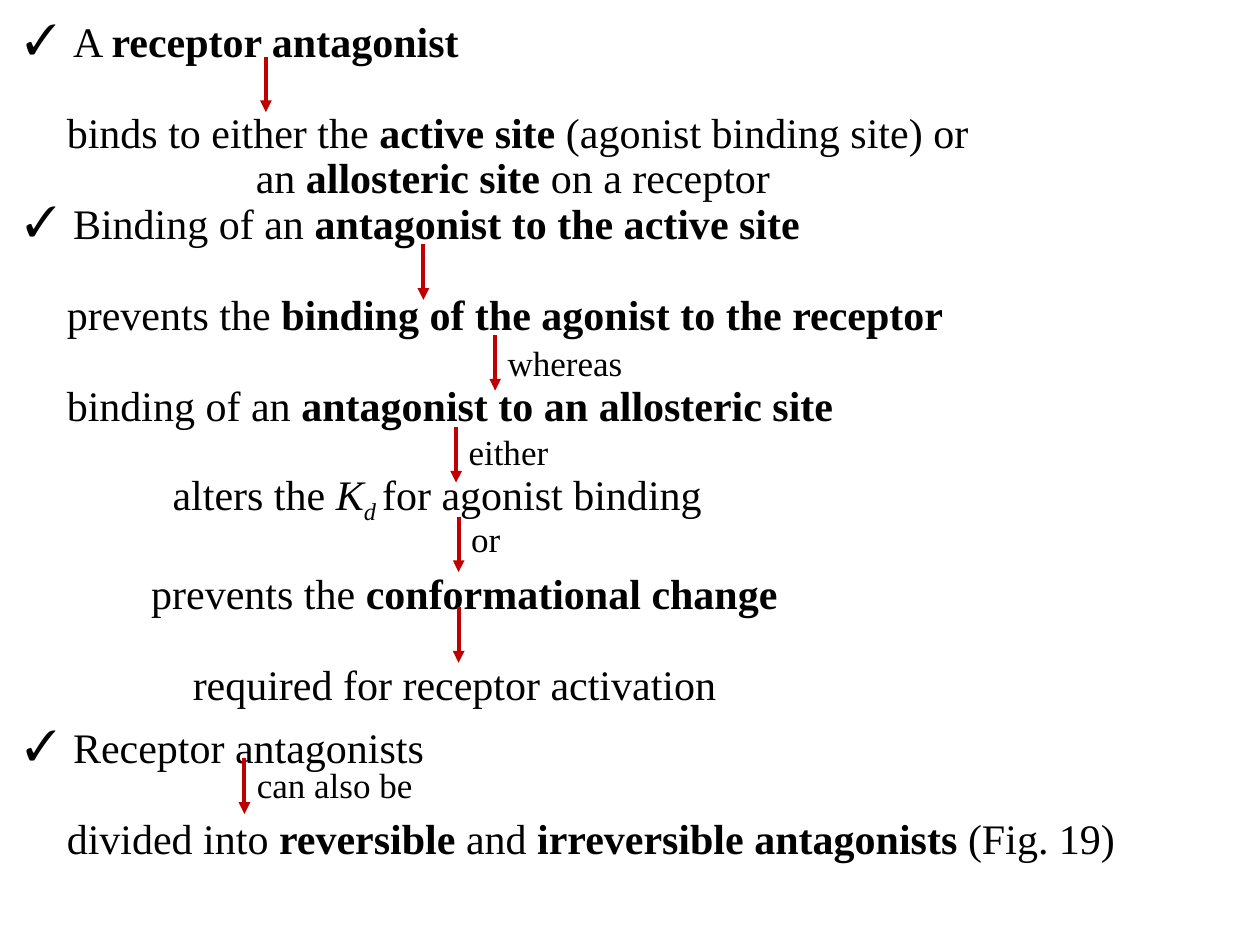
from lxml import etree
from pptx import Presentation
from pptx.dml.color import RGBColor
from pptx.enum.shapes import MSO_CONNECTOR
from pptx.enum.text import MSO_ANCHOR, MSO_AUTO_SIZE, PP_ALIGN
from pptx.oxml.ns import qn
from pptx.util import Inches, Pt

BLACK = RGBColor(0x00, 0x00, 0x00)
RED = RGBColor(0xC0, 0x00, 0x00)
FONT = "Times New Roman"
LINE = 26  # points from one line to the next
ARROW_LENGTH = 0.44

# Each line: bulleted, left indent (inches), space before (points), runs (text, style)
LINES = [
    (True, 0.38, 0, [("A ", ""), ("receptor antagonist", "bold")]),
    (False, 0.33, LINE, [("binds to either the ", ""), ("active site ", "bold"),
                         ("(agonist binding site) or", "")]),
    (False, 1.83, 0, [("an ", ""), ("allosteric site ", "bold"), ("on a receptor", "")]),
    (True, 0.38, 0, [("Binding of an ", ""), ("antagonist to the active site", "bold")]),
    (False, 0.33, LINE, [("prevents the ", ""),
                         ("binding of the agonist to the receptor", "bold")]),
    (False, 0.33, LINE, [("binding of an ", ""),
                         ("antagonist to an allosteric site", "bold")]),
    (False, 1.17, LINE + 3, [("alters the ", ""), ("K", "italic"), ("d ", "subscript"),
                             ("for agonist binding", "")]),
    (False, 1, LINE + 0.5, [("prevents the ", ""), ("conformational change", "bold")]),
    (False, 1.33, LINE, [("required for receptor activation", "")]),
    (True, 0.38, 10, [("Receptor antagonists", "")]),
    (False, 0.33, LINE, [("divided into ", ""), ("reversible ", "bold"), ("and ", ""),
                         ("irreversible antagonists ", "bold"), ("(Fig. 19)", "")]),
]

# Each step: arrow x, arrow top, label, label top, label width (inches)
STEPS = [
    (2.11, 0.45, None, 0, 0),
    (3.36, 1.94, None, 0, 0),
    (3.93, 2.66, "whereas", 2.66, 1.15),
    (3.62, 3.39, "either", 3.37, 0.89),
    (3.64, 4.1, "or", 4.06, 0.49),
    (3.64, 4.82, None, 0, 0),
    (1.94, 6.02, "can also be", 6.01, 1.5),
]


def set_bullet(paragraph, bulleted):
    properties = paragraph._p.get_or_add_pPr()
    if bulleted:
        etree.SubElement(properties, qn("a:buFont"), typeface=FONT)
        etree.SubElement(properties, qn("a:buChar"), char="✓")
    else:
        etree.SubElement(properties, qn("a:buNone"))


def set_indent(paragraph, left, first):
    properties = paragraph._p.get_or_add_pPr()
    properties.set("marL", str(Inches(left)))
    properties.set("indent", str(Inches(first)))


def add_run(paragraph, text, style):
    run = paragraph.add_run()
    run.text = text
    run.font.bold = style == "bold"
    run.font.italic = style in ("italic", "subscript")
    if style == "subscript":
        run._r.get_or_add_rPr().set("baseline", "-25000")


def set_font(paragraph, size):
    paragraph.font.name = FONT
    paragraph.font.size = Pt(size)
    paragraph.font.color.rgb = BLACK


def fill_body(shape, left, top, width, height):
    shape.left, shape.top = Inches(left), Inches(top)
    shape.width, shape.height = Inches(width), Inches(height)
    frame = shape.text_frame
    frame.word_wrap = True
    frame.auto_size = MSO_AUTO_SIZE.NONE
    frame.vertical_anchor = MSO_ANCHOR.TOP
    for index, (bulleted, indent, before, runs) in enumerate(LINES):
        paragraph = frame.add_paragraph() if index else frame.paragraphs[0]
        set_indent(paragraph, indent, -indent if bulleted else 0)
        paragraph.alignment = PP_ALIGN.JUSTIFY
        paragraph.line_spacing = Pt(LINE)
        paragraph.space_before = Pt(before)
        paragraph.space_after = Pt(0)
        set_bullet(paragraph, bulleted)
        set_font(paragraph, 24)
        for text, style in runs:
            add_run(paragraph, text, style)


def add_arrow(slide, x, top):
    arrow = slide.shapes.add_connector(
        MSO_CONNECTOR.STRAIGHT, Inches(x), Inches(top), Inches(x), Inches(top + ARROW_LENGTH))
    arrow.line.color.rgb = RED
    arrow.line.width = Pt(2.25)
    etree.SubElement(arrow.line._get_or_add_ln(), qn("a:tailEnd"), type="triangle")
    etree.SubElement(arrow._element.spPr, qn("a:effectLst"))


def add_label(slide, text, left, top, width):
    label = slide.shapes.add_textbox(Inches(left), Inches(top), Inches(width), Inches(0.44))
    label.text_frame.auto_size = MSO_AUTO_SIZE.SHAPE_TO_FIT_TEXT
    paragraph = label.text_frame.paragraphs[0]
    paragraph.text = text
    set_font(paragraph, 20)


def main():
    presentation = Presentation()
    presentation.slide_width, presentation.slide_height = Inches(10), Inches(7.5)
    slide = presentation.slides.add_slide(presentation.slide_layouts[0])

    # Body text in the subtitle; the slide has no title
    title = slide.shapes.title._element
    title.getparent().remove(title)
    fill_body(slide.placeholders[1], 0.1, 0.11, 9.78, 7.28)

    # Arrows between the lines, with their linking words
    for x, top, text, label_top, label_width in STEPS:
        add_arrow(slide, x, top)
        if text:
            add_label(slide, text, x, label_top, label_width)

    presentation.save("out.pptx")


if __name__ == "__main__":
    main()
